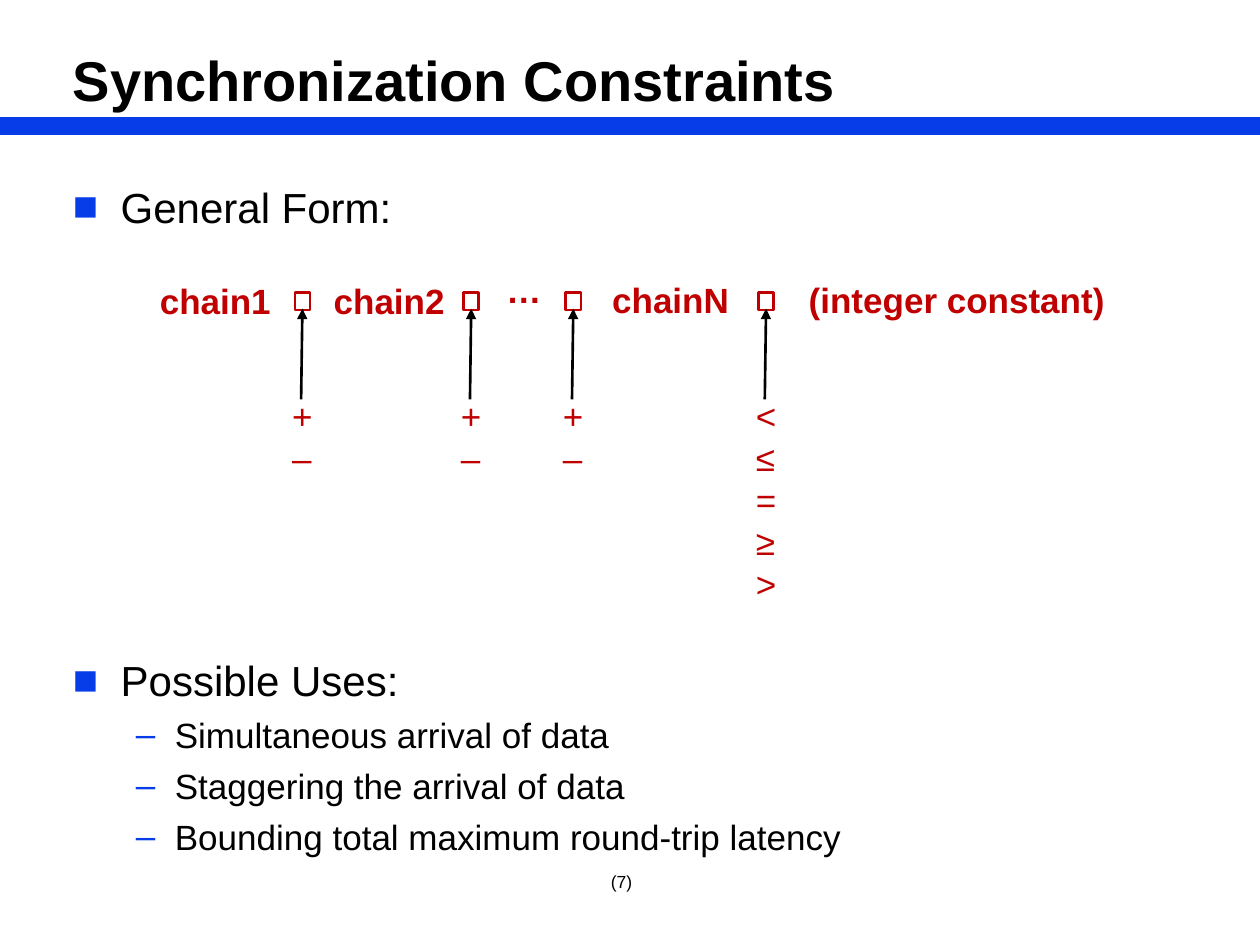
from lxml import etree
from pptx import Presentation
from pptx.dml.color import RGBColor
from pptx.enum.shapes import MSO_CONNECTOR, MSO_SHAPE
from pptx.enum.text import MSO_ANCHOR
from pptx.oxml.ns import qn
from pptx.util import Inches, Pt

STRAIGHT = MSO_CONNECTOR.STRAIGHT
RECT = MSO_SHAPE.RECTANGLE
TOP, MIDDLE = MSO_ANCHOR.TOP, MSO_ANCHOR.MIDDLE
BLACK, BLUE, RED = "000000", "063DE8", "C00000"

TERMS = [
    ("chain1", 1.17, 2.17, 1.17),
    ("chain2", 2.55, 2.17, 1.17),
    ("…", 3.92, 2.08, 0.56),
    ("chainN", 4.76, 2.16, 1.22),
    ("(integer constant)", 6.32, 2.16, 2.65),
]
OPERATORS = [(2.34, "+–"), (3.68, "+–"), (4.49, "+–"), (6.02, "<≤=≥>")]
BULLETS = [
    ("General Form:", 0, 0),
    ("Possible Uses:", 0, 241.5),
    ("Simultaneous arrival of data", 1, 5),
    ("Staggering the arrival of data", 1, 5),
    ("Bounding total maximum round-trip latency", 1, 5),
]
LEVELS = [("■", 24, 0.38, 0.38), ("–", 20, 0.81, 0.31)]


def rgb(color):
    return RGBColor.from_string(color)


def add_box(s, x, y, w, h, anchor=TOP):
    tf = s.shapes.add_textbox(Inches(x), Inches(y), Inches(w), Inches(h)).text_frame
    tf.word_wrap = True
    tf.vertical_anchor = anchor
    return tf


def add_run(p, text, size, color, bold=False):
    r = p.add_run()
    r.text = text
    r.font.name = "Arial"
    r.font.size = Pt(size)
    r.font.bold = bold
    r.font.color.rgb = rgb(color)


def next_paragraph(tf, i):
    return tf.add_paragraph() if i else tf.paragraphs[0]


def add_label(s, text, x, y, w, h, size, color, bold=False, anchor=TOP):
    tf = add_box(s, x, y, w, h, anchor)
    add_run(tf.paragraphs[0], text, size, color, bold)


def add_line(s, x1, y1, x2, y2, color, width, arrow=False):
    c = s.shapes.add_connector(STRAIGHT, Inches(x1), Inches(y1), Inches(x2), Inches(y2))
    c.line.color.rgb = rgb(color)
    c.line.width = Pt(width)
    if arrow:
        etree.SubElement(c.line._get_or_add_ln(), qn("a:tailEnd"), type="triangle")
    etree.SubElement(c._element.spPr, qn("a:effectLst"))


def add_bullet(p, level):
    char, _, margin, hang = LEVELS[level]
    pPr = p._p.get_or_add_pPr()
    pPr.set("marL", str(Inches(margin)))
    pPr.set("indent", str(-Inches(hang)))
    clr = etree.SubElement(pPr, qn("a:buClr"))
    etree.SubElement(clr, qn("a:srgbClr"), val=BLUE)
    etree.SubElement(pPr, qn("a:buFont"), typeface="Arial")
    etree.SubElement(pPr, qn("a:buChar"), char=char)


def add_bullets(s):
    tf = add_box(s, 0.48, 1.39, 9.04, 4.94)
    for i, (text, level, before) in enumerate(BULLETS):
        p = next_paragraph(tf, i)
        add_bullet(p, level)
        p.level = level
        if before:
            p.space_before = Pt(before)
        add_run(p, text, LEVELS[level][1], BLACK)


def add_operator(s, x, choices):
    sp = s.shapes.add_shape(RECT, Inches(x), Inches(2.32), Inches(0.12), Inches(0.14))
    sp.shadow.inherit = False
    sp.fill.background()
    sp.line.color.rgb = rgb(RED)
    sp.line.width = Pt(1.5)
    tf = add_box(s, x - 0.12, 3.08, 0.36, 0.43 + 0.34 * len(choices))
    for i, choice in enumerate(choices):
        p = next_paragraph(tf, i)
        p.line_spacing = Pt(24)
        add_run(p, choice, 20, RED)
    add_line(s, x + 0.05, 3.17, x + 0.06, 2.45, BLACK, 1.5, arrow=True)


def main():
    prs = Presentation()
    prs.slide_width, prs.slide_height = Inches(10), Inches(7.5)
    s = prs.slides.add_slide(prs.slide_layouts[6])
    add_line(s, 0, 1, 10, 1, BLUE, 10)
    add_label(s, "Synchronization Constraints", 0.48, 0, 9.04, 1.25, 32, BLACK, True, MIDDLE)
    add_bullets(s)
    add_label(s, "(7)", 4.75, 6.75, 0.5, 0.5, 10, BLACK, anchor=MIDDLE)
    for text, x, y, w in TERMS:
        add_label(s, text, x, y, w, 0.44, 20, RED, True)
    for x, choices in OPERATORS:
        add_operator(s, x, choices)
    prs.save("out.pptx")


if __name__ == "__main__":
    main()
